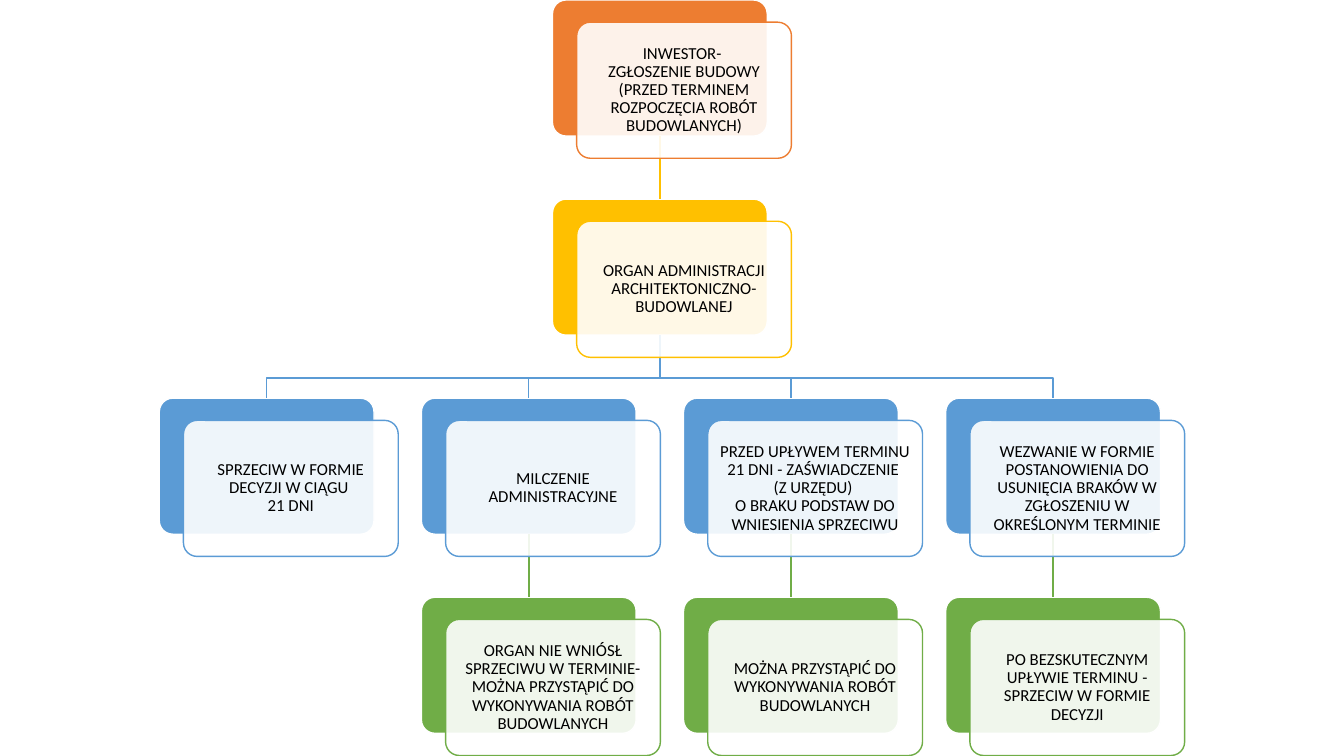
from lxml import etree
from pptx import Presentation
from pptx.dml.color import RGBColor
from pptx.enum.shapes import MSO_CONNECTOR, MSO_SHAPE
from pptx.enum.text import MSO_ANCHOR, PP_ALIGN
from pptx.oxml.ns import qn
from pptx.util import Inches, Pt

STRAIGHT = MSO_CONNECTOR.STRAIGHT
ROUNDED = MSO_SHAPE.ROUNDED_RECTANGLE
MIDDLE = MSO_ANCHOR.MIDDLE
CENTER = PP_ALIGN.CENTER
BOTTOM_SIDE, TOP_SIDE = 2, 0

FONT = "Calibri"
WHITE, BLACK = "FFFFFF", "000000"
ROW_COLORS = ["ED7D31", "FFC000", "5B9BD5", "70AD47"]
CARD_WIDTH, CARD_HEIGHT = 2.13, 1.35
OFFSET_X, OFFSET_Y = 0.24, 0.22
FIRST_LEFT, COLUMN_PITCH = 1.58, 2.6
ROW_PITCH = 7.9 / 4
BEND_ABOVE_CHILD = 0.2

STEPS = {
    "notice": (1.5, 0, "INWESTOR- \vZGŁOSZENIE BUDOWY (PRZED TERMINEM ROZPOCZĘCIA ROBÓT BUDOWLANYCH)"),
    "authority": (1.5, 1, "ORGAN ADMINISTRACJI ARCHITEKTONICZNO-BUDOWLANEJ"),
    "objection": (0, 2, "SPRZECIW W FORMIE DECYZJI W CIĄGU \v21 DNI"),
    "silence": (1, 2, "MILCZENIE ADMINISTRACYJNE"),
    "certificate": (2, 2, "PRZED UPŁYWEM TERMINU 21 DNI - ZAŚWIADCZENIE \v(Z URZĘDU) \v"
                          "O BRAKU PODSTAW DO WNIESIENIA SPRZECIWU"),
    "summons": (3, 2, "WEZWANIE W FORMIE POSTANOWIENIA DO USUNIĘCIA BRAKÓW W ZGŁOSZENIU "
                      "W OKREŚLONYM TERMINIE"),
    "no_objection": (1, 3, "ORGAN NIE WNIÓSŁ SPRZECIWU W TERMINIE- MOŻNA PRZYSTĄPIĆ DO "
                           "WYKONYWANIA ROBÓT BUDOWLANYCH"),
    "works_allowed": (2, 3, "MOŻNA PRZYSTĄPIĆ DO WYKONYWANIA ROBÓT BUDOWLANYCH"),
    "late_objection": (3, 3, "PO BEZSKUTECZNYM UPŁYWIE TERMINU - SPRZECIW W FORMIE DECYZJI"),
}
STRAIGHT_LINKS = [
    ("notice", "authority"),
    ("silence", "no_objection"),
    ("certificate", "works_allowed"),
    ("summons", "late_objection"),
]
BRANCHES = ["objection", "silence", "certificate", "summons"]


def color(value):
    """Turn a hex string into a colour."""
    return RGBColor.from_string(value)


def set_line(item, value):
    """Give a shape or connector a one-point line."""
    item.line.color.rgb = color(value)
    item.line.width = Pt(1)


def card_origin(column, row):
    """Return the left and top of a card in inches."""
    return FIRST_LEFT + column * COLUMN_PITCH, row * ROW_PITCH


def add_card(page, left, top, fill, line):
    """Add a rounded card of the common size."""
    card = page.shapes.add_shape(
        ROUNDED, Inches(left), Inches(top), Inches(CARD_WIDTH), Inches(CARD_HEIGHT))
    card.adjustments[0] = 0.1
    card.shadow.inherit = False
    card.fill.solid()
    card.fill.fore_color.rgb = color(fill)
    set_line(card, line)
    return card


def add_label_card(page, column, row, text):
    """Add the translucent white card that carries the text of a step."""
    left, top = card_origin(column, row)
    card = add_card(page, left + OFFSET_X, top + OFFSET_Y, WHITE, ROW_COLORS[row])
    fill_color = card._element.spPr.find(qn("a:solidFill"))[0]
    etree.SubElement(fill_color, qn("a:alpha"), val="90000")
    frame = card.text_frame
    frame.word_wrap = True
    frame.vertical_anchor = MIDDLE
    frame.margin_left = frame.margin_right = Inches(0.05)
    frame.margin_top = frame.margin_bottom = Inches(0.05)
    frame.text = text
    para = frame.paragraphs[0]
    para.alignment = CENTER
    para.line_spacing = 0.9
    para.font.size = Pt(12)
    for span in para.runs:
        span.font.name = FONT
        span.font.size = Pt(12)
        span.font.color.rgb = color(BLACK)


def add_straight_link(page, parent, child, value):
    """Join the bottom of one card to the top of the card below."""
    link = page.shapes.add_connector(STRAIGHT, 0, 0, 0, 0)
    link.begin_connect(parent, BOTTOM_SIDE)
    link.end_connect(child, TOP_SIDE)
    set_line(link, value)
    etree.SubElement(link._element.spPr, qn("a:effectLst"))


def add_branch(page, parent, child, value):
    """Draw a bent line from a parent card to a child card."""
    start_x = parent.left + parent.width // 2
    end_x = child.left + child.width // 2
    bend_y = child.top - Inches(BEND_ABOVE_CHILD)
    builder = page.shapes.build_freeform(start_x, parent.top + parent.height)
    builder.add_line_segments(
        [(start_x, bend_y), (end_x, bend_y), (end_x, child.top)], close=False)
    branch = builder.convert_to_shape()
    branch.shadow.inherit = False
    branch.fill.background()
    set_line(branch, value)


def main():
    """Build the flow chart slide."""
    deck = Presentation()
    deck.slide_width, deck.slide_height = Inches(13.33), Inches(7.5)
    page = deck.slides.add_slide(deck.slide_layouts[6])
    cards = {}
    for name, (column, row, _) in STEPS.items():
        left, top = card_origin(column, row)
        cards[name] = add_card(page, left, top, ROW_COLORS[row], WHITE)
    for parent, child in STRAIGHT_LINKS:
        add_straight_link(page, cards[parent], cards[child], ROW_COLORS[STEPS[child][1]])
    for child in BRANCHES:
        add_branch(page, cards["authority"], cards[child], ROW_COLORS[STEPS[child][1]])
    for column, row, text in STEPS.values():
        add_label_card(page, column, row, text)
    deck.save("out.pptx")


if __name__ == "__main__":
    main()
